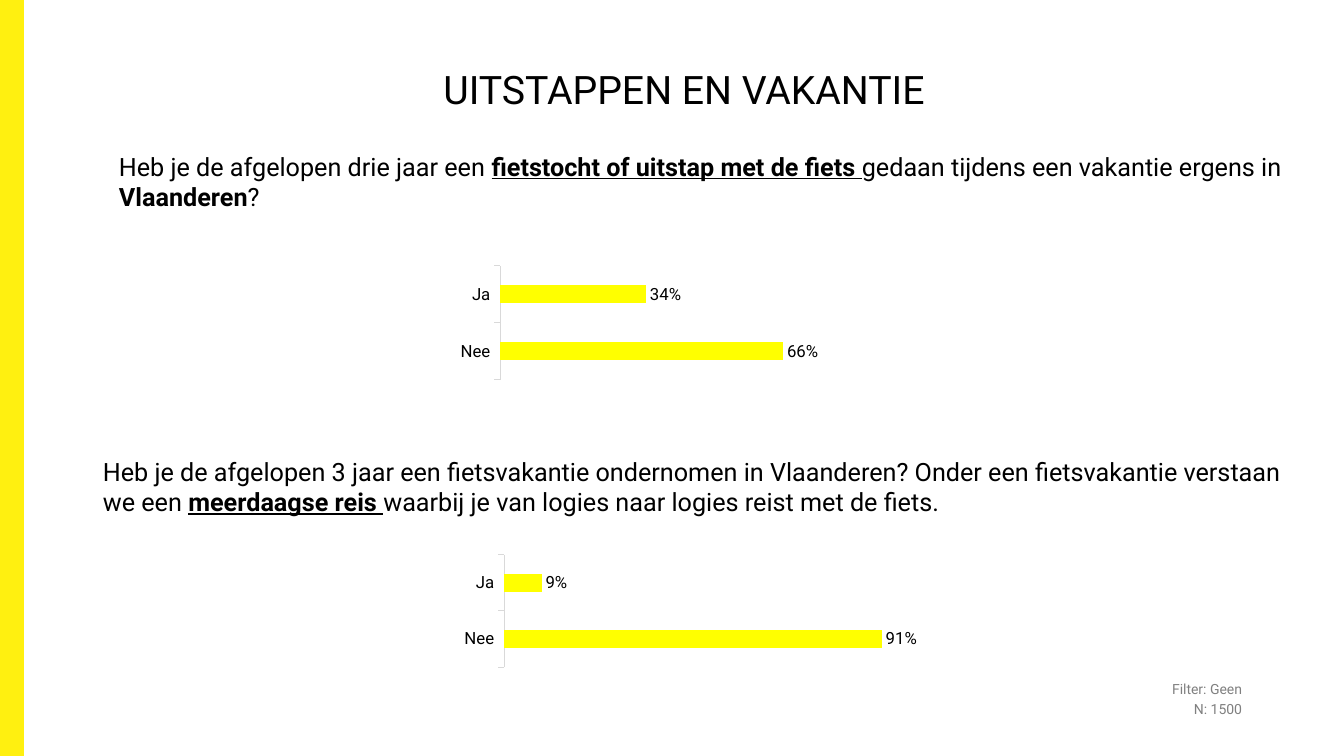
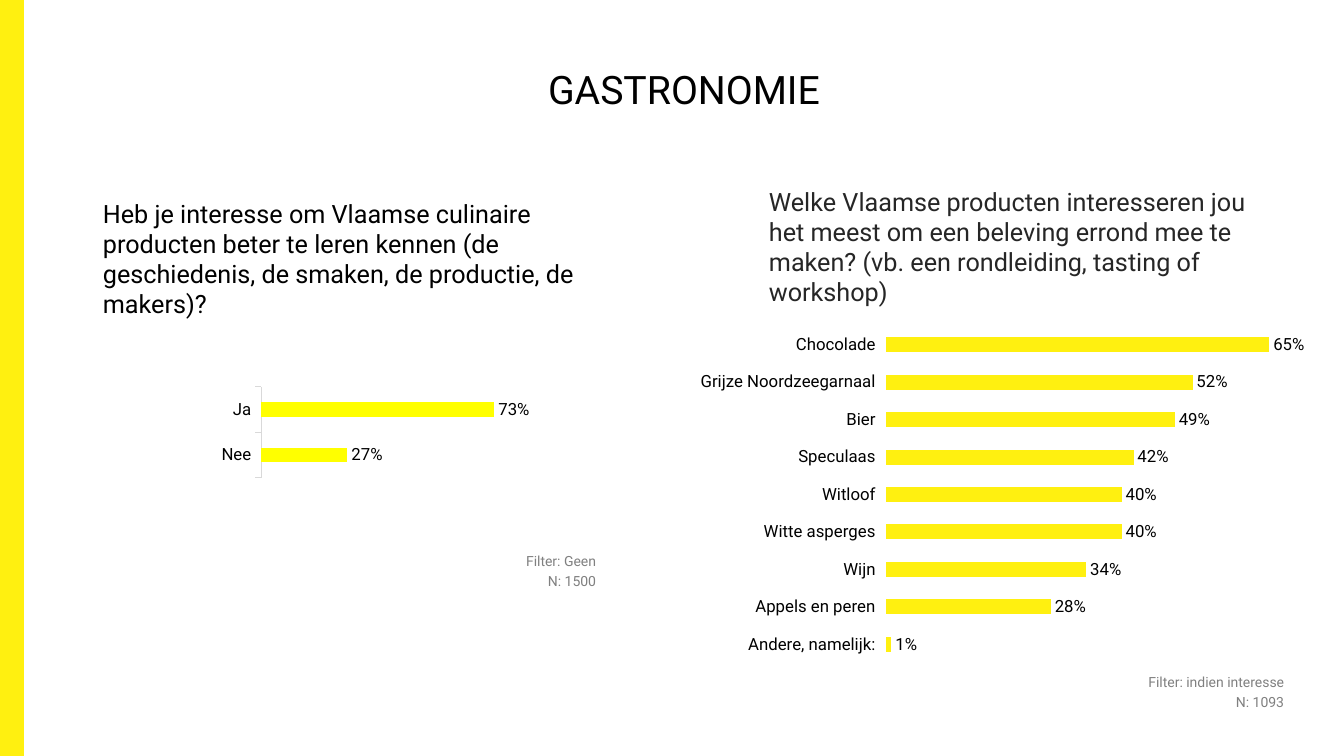
from lxml.etree import SubElement
from pptx import Presentation
from pptx.chart.data import CategoryChartData
from pptx.dml.color import RGBColor
from pptx.enum.chart import XL_CHART_TYPE, XL_LABEL_POSITION, XL_TICK_MARK
from pptx.enum.shapes import MSO_SHAPE
from pptx.enum.text import PP_ALIGN
from pptx.oxml.ns import qn
from pptx.util import Emu, Pt

SLIDE_WIDTH, SLIDE_HEIGHT = 1344, 756
EMU_PER_PX = 12192000 / SLIDE_WIDTH
FONT = "Roboto"
PERCENT = "###0%"
COLORS = {
    "band": "FFF010",
    "bar": "FFFF00",
    "text": "000000",
    "soft_text": "262626",
    "note": "808080",
    "axis": "D9D9D9",
}


def px(length):
    return Emu(round(length * EMU_PER_PX))


def color(name):
    return RGBColor.from_string(COLORS[name])


def style_font(font, size, color_name="text"):
    font.name = FONT
    font.size = Pt(size)
    font.color.rgb = color(color_name)


def add_text(slide, box, paragraphs, size=18, color_name="text",
             align=PP_ALIGN.LEFT, space_before=0):
    shape = slide.shapes.add_textbox(*map(px, box))
    frame = shape.text_frame
    frame.word_wrap = True
    for index, runs in enumerate(paragraphs):
        paragraph = frame.paragraphs[0] if index == 0 else frame.add_paragraph()
        paragraph.alignment = align
        if index:
            paragraph.space_before = Pt(space_before)
        for text, emphasis in runs:
            run = paragraph.add_run()
            run.text = text
            style_font(run.font, size, color_name)
            run.font.bold = "b" in emphasis
            run.font.underline = "u" in emphasis


def add_question(slide, box, *runs, color_name="text"):
    add_text(slide, box, [runs], color_name=color_name)


def add_note(slide, left, top, *lines):
    add_text(slide, (left, top, 384, 53), [[(line, "")] for line in lines],
             size=10, color_name="note", align=PP_ALIGN.RIGHT, space_before=2)


def set_plot_area(chart, bounds):
    plot_area = chart._chartSpace.chart.plotArea
    for old_layout in plot_area.findall(qn("c:layout")):
        plot_area.remove(old_layout)
    layout = SubElement(plot_area, qn("c:layout"))
    plot_area.insert(0, layout)
    manual = SubElement(layout, qn("c:manualLayout"))
    settings = [("layoutTarget", "inner"), ("xMode", "edge"), ("yMode", "edge")]
    for tag, value in settings + list(zip("xywh", bounds)):
        SubElement(manual, qn(f"c:{tag}")).set("val", str(value))


def add_bar_chart(slide, box, values, plot, bar_color="bar", gap=219,
                  maximum=1, axis_line=True):
    data = CategoryChartData(number_format=PERCENT)
    data.categories = list(values)
    data.add_series("Series 1", list(values.values()))
    chart = slide.shapes.add_chart(
        XL_CHART_TYPE.BAR_CLUSTERED, *map(px, box), data).chart
    chart.has_legend = False
    chart.has_title = False
    style_font(chart.font, 12)
    set_plot_area(chart, plot)

    categories = chart.category_axis
    categories.reverse_order = True
    categories.has_major_gridlines = False
    categories.major_tick_mark = XL_TICK_MARK.OUTSIDE
    style_font(categories.tick_labels.font, 12)
    line = categories.format.line
    if axis_line:
        line.color.rgb = color("axis")
        line.width = Pt(0.75)
    else:
        line.fill.background()

    value_axis = chart.value_axis
    value_axis.minimum_scale = 0
    value_axis.maximum_scale = maximum
    value_axis.has_major_gridlines = False
    value_axis.visible = False

    bars = chart.plots[0]
    bars.gap_width = gap
    bars.vary_by_categories = False
    fill = bars.series[0].format.fill
    fill.solid()
    fill.fore_color.rgb = color(bar_color)
    bars.has_data_labels = True
    labels = bars.data_labels
    labels.show_value = True
    labels.position = XL_LABEL_POSITION.OUTSIDE_END
    labels.number_format = PERCENT
    labels.number_format_is_linked = False
    style_font(labels.font, 12)


def add_yes_no_chart(slide, box, yes, no, plot_height=0.9):
    add_bar_chart(slide, box, {"Ja": yes, "Nee": no},
                  (0.34, 0.03, 0.5, plot_height))


def add_slide(presentation, title):
    slide = presentation.slides.add_slide(presentation.slide_layouts[6])
    band = slide.shapes.add_shape(
        MSO_SHAPE.RECTANGLE, 0, 0, px(24), px(SLIDE_HEIGHT))
    band.shadow.inherit = False
    band.fill.solid()
    band.fill.fore_color.rgb = color("band")
    band.line.fill.background()
    add_text(slide, (24, 60, 1320, 60), [[(title, "")]],
             size=28, align=PP_ALIGN.CENTER)
    return slide


def add_trips_slide(presentation):
    slide = add_slide(presentation, "UITSTAPPEN EN VAKANTIE")
    add_question(
        slide, (109, 146, 1225, 74),
        ("Heb je de afgelopen drie jaar een ", ""),
        ("fietstocht of uitstap met de fiets ", "bu"),
        ("gedaan tijdens een vakantie ergens in ", ""),
        ("Vlaanderen", "b"),
        ("?", ""))
    add_yes_no_chart(slide, (209, 262, 857, 127), 0.34, 0.66)
    add_question(
        slide, (93, 451, 1225, 88),
        ("Heb je de afgelopen 3 jaar een fietsvakantie ondernomen in "
         "Vlaanderen? Onder een fietsvakantie verstaan we een ", ""),
        ("meerdaagse reis ", "bu"),
        ("waarbij je van logies naar logies reist met de fiets.", ""))
    add_yes_no_chart(slide, (222, 551, 830, 125), 0.09, 0.91)
    add_note(slide, 868, 676, "Filter: Geen", "N: 1500")


def add_food_slide(presentation):
    slide = add_slide(presentation, "GASTRONOMIE")
    add_question(
        slide, (93, 193, 563, 130),
        ("Heb je interesse om Vlaamse culinaire producten beter te leren "
         "kennen (de geschiedenis, de smaken, de productie, de makers)?", ""))
    add_yes_no_chart(slide, (44, 384, 639, 96), 0.73, 0.27, plot_height=0.95)
    add_note(slide, 222, 548, "Filter: Geen", "N: 1500")
    add_question(
        slide, (759, 181, 528, 130),
        ("Welke Vlaamse producten interesseren jou het meest om een beleving "
         "errond mee te maken? (vb. een rondleiding, tasting of workshop)", ""),
        color_name="soft_text")
    products = {
        "Chocolade": 0.65,
        "Grijze Noordzeegarnaal": 0.52,
        "Bier": 0.49,
        "Speculaas": 0.42,
        "Witloof": 0.4,
        "Witte asperges": 0.4,
        "Wijn": 0.34,
        "Appels en peren": 0.28,
        "Andere, namelijk:": 0.01,
    }
    add_bar_chart(slide, (567, 326, 777, 344), products,
                  (0.41, 0, 0.57, 0.98), bar_color="band", gap=150,
                  maximum=0.75, axis_line=False)
    add_note(slide, 910, 669, "Filter: indien interesse", "N: 1093")


def main():
    presentation = Presentation()
    presentation.slide_width = px(SLIDE_WIDTH)
    presentation.slide_height = px(SLIDE_HEIGHT)
    add_trips_slide(presentation)
    add_food_slide(presentation)
    presentation.save("out.pptx")


if __name__ == "__main__":
    main()
